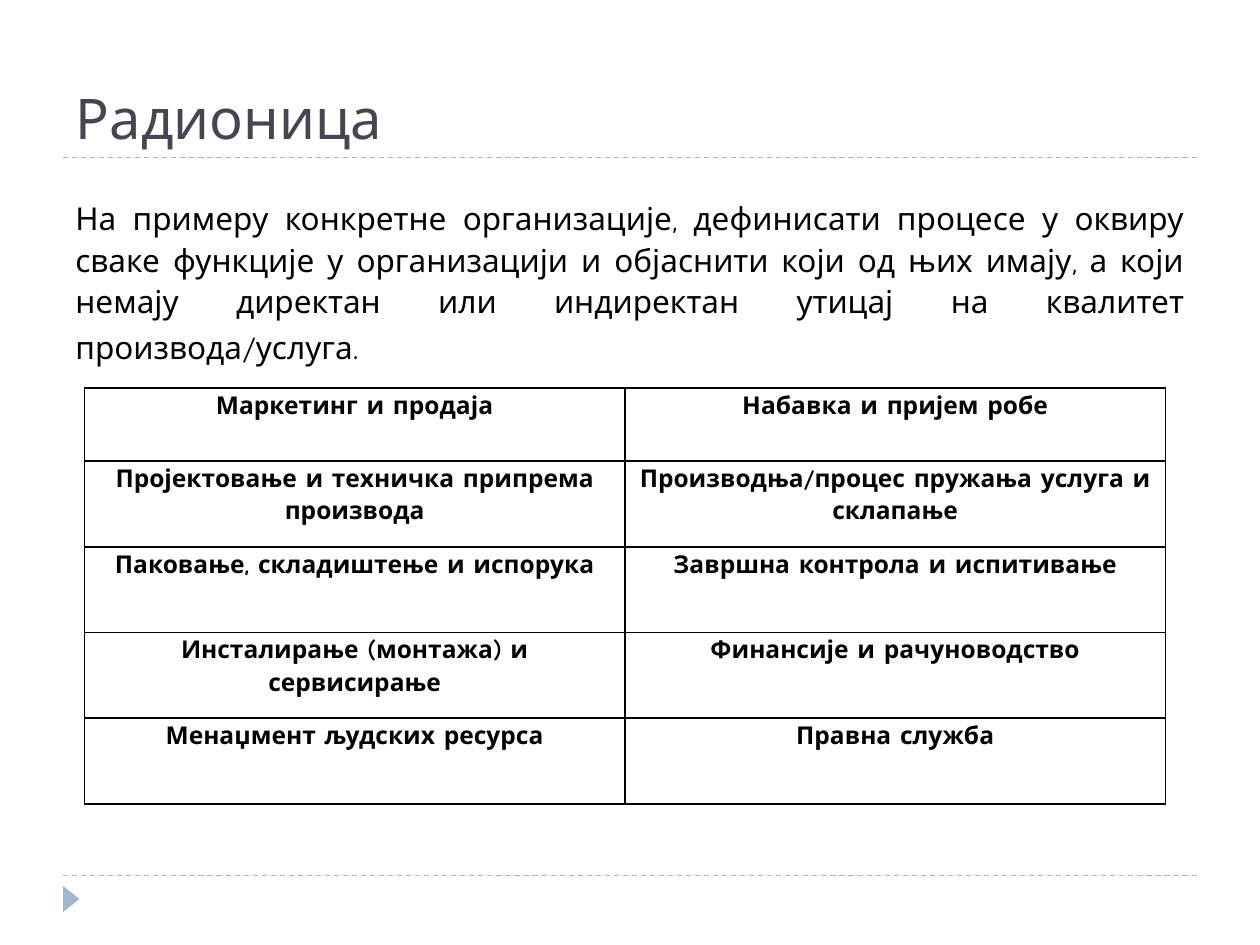
from lxml.etree import SubElement
from pptx import Presentation
from pptx.dml.color import RGBColor
from pptx.enum.dml import MSO_LINE
from pptx.enum.shapes import MSO_CONNECTOR, MSO_SHAPE
from pptx.enum.text import MSO_ANCHOR, PP_ALIGN
from pptx.oxml.ns import qn
from pptx.util import Inches, Pt

COLORS = {"title": "464653", "text": "000000", "accent": "9FB8CD", "border": "000000"}
FONT = "Comic Neue"
NARROW, WIDE = 0.07, 0.12
FUNCTIONS = [
    [("Маркетинг и продаја", NARROW), ("Набавка и пријем робе", NARROW)],
    [("Пројектовање и техничка припрема производа", NARROW),
     ("Производња/процес пружања услуга и склапање", NARROW)],
    [("Паковање, складиштење и испорука", WIDE), ("Завршна контрола и испитивање", WIDE)],
    [("Инсталирање (монтажа) и сервисирање", WIDE), ("Финансије и рачуноводство", NARROW)],
    [("Менаџмент људских ресурса", WIDE), ("Правна служба", NARROW)],
]
TASK = ("На примеру конкретне организације, дефинисати процесе у оквиру сваке функције "
        "у организацији и објаснити који од њих имају, а који немају директан или "
        "индиректан утицај на квалитет производа/услуга")


def color(name):
    """Return the named palette colour."""
    return RGBColor.from_string(COLORS[name])


def style_font(font, size, color_name, bold=False):
    """Set the face, size, colour and weight of a font."""
    font.name, font.size, font.bold = FONT, Pt(size), bold
    font.color.rgb = color(color_name)


def add_rule(slide, left, top, width):
    """Draw a dashed horizontal rule."""
    rule = slide.shapes.add_connector(
        MSO_CONNECTOR.STRAIGHT, Inches(left), Inches(top), Inches(left + width), Inches(top))
    rule.line.color.rgb = color("accent")
    rule.line.width = Pt(0.75)
    rule.line.dash_style = MSO_LINE.DASH
    SubElement(rule._element.spPr, qn("a:effectLst"))


def add_marker(slide, left, top, width, height):
    """Draw the footer triangle pointing right."""
    marker = slide.shapes.add_shape(
        MSO_SHAPE.ISOSCELES_TRIANGLE, Inches(left), Inches(top), Inches(width), Inches(height))
    marker.rotation = 90
    marker.shadow.inherit = False
    marker.fill.solid()
    marker.fill.fore_color.rgb = color("accent")
    marker.line.fill.background()


def place_title(slide, left, top, width, height):
    """Move and format the title placeholder."""
    title = slide.shapes.title
    title.left, title.top = Inches(left), Inches(top)
    title.width, title.height = Inches(width), Inches(height)
    frame = title.text_frame
    frame.text = "Радионица"
    frame.word_wrap = True
    frame.vertical_anchor = MSO_ANCHOR.BOTTOM
    paragraph = frame.paragraphs[0]
    paragraph.alignment = PP_ALIGN.LEFT
    style_font(paragraph.font, 32, "title")


def add_task(slide, left, top, width, height):
    """Add the justified task description."""
    box = slide.shapes.add_textbox(Inches(left), Inches(top), Inches(width), Inches(height))
    box.text_frame.word_wrap = True
    paragraph = box.text_frame.paragraphs[0]
    paragraph.alignment = PP_ALIGN.JUSTIFY
    paragraph.line_spacing = 1.1
    paragraph.space_before = Pt(6)
    for text, size in ((TASK, 18), (".", 20)):
        run = paragraph.add_run()
        run.text = text
        style_font(run.font, size, "text")


def add_borders(cell):
    """Give a cell thin solid borders on all sides."""
    properties = cell._tc.get_or_add_tcPr()
    for position, side in enumerate(("lnL", "lnR", "lnT", "lnB")):
        line = SubElement(properties, qn(f"a:{side}"), w=str(Pt(1)))
        fill = SubElement(line, qn("a:solidFill"))
        SubElement(fill, qn("a:srgbClr"), val=COLORS["border"])
        properties.insert(position, line)


def fill_cell(cell, text, margin):
    """Write a centred bold function name into a bordered cell."""
    cell.fill.background()
    add_borders(cell)
    cell.margin_left = cell.margin_right = Inches(margin)
    cell.margin_top = cell.margin_bottom = 0
    cell.text = text
    paragraph = cell.text_frame.paragraphs[0]
    paragraph.alignment = PP_ALIGN.CENTER
    paragraph.line_spacing = 1.15
    style_font(paragraph.font, 14, "text", bold=True)


def add_functions_table(slide, left, top, width, first_height, row_height):
    """Add the table of company functions."""
    height = first_height + row_height * (len(FUNCTIONS) - 1)
    table = slide.shapes.add_table(
        len(FUNCTIONS), len(FUNCTIONS[0]),
        Inches(left), Inches(top), Inches(width), Inches(height)).table
    table.first_row = table.horz_banding = False
    for row_index, entries in enumerate(FUNCTIONS):
        table.rows[row_index].height = Inches(row_height if row_index else first_height)
        for column_index, (text, margin) in enumerate(entries):
            fill_cell(table.cell(row_index, column_index), text, margin)


def main():
    """Build and save the workshop slide."""
    presentation = Presentation()
    presentation.slide_width, presentation.slide_height = Inches(10), Inches(7.5)
    slide = presentation.slides.add_slide(presentation.slide_layouts[5])
    for top in (6.95, 1.25):
        add_rule(slide, 0.5, top, 9)
    add_marker(slide, 0.46, 7.07, 0.21, 0.13)
    place_title(slide, 0.5, 0.17, 9, 1.08)
    add_task(slide, 0.5, 1.5, 9, 1.92)
    add_functions_table(slide, 0.67, 3.08, 8.58, 0.58, 0.68)
    presentation.save("out.pptx")


if __name__ == "__main__":
    main()
